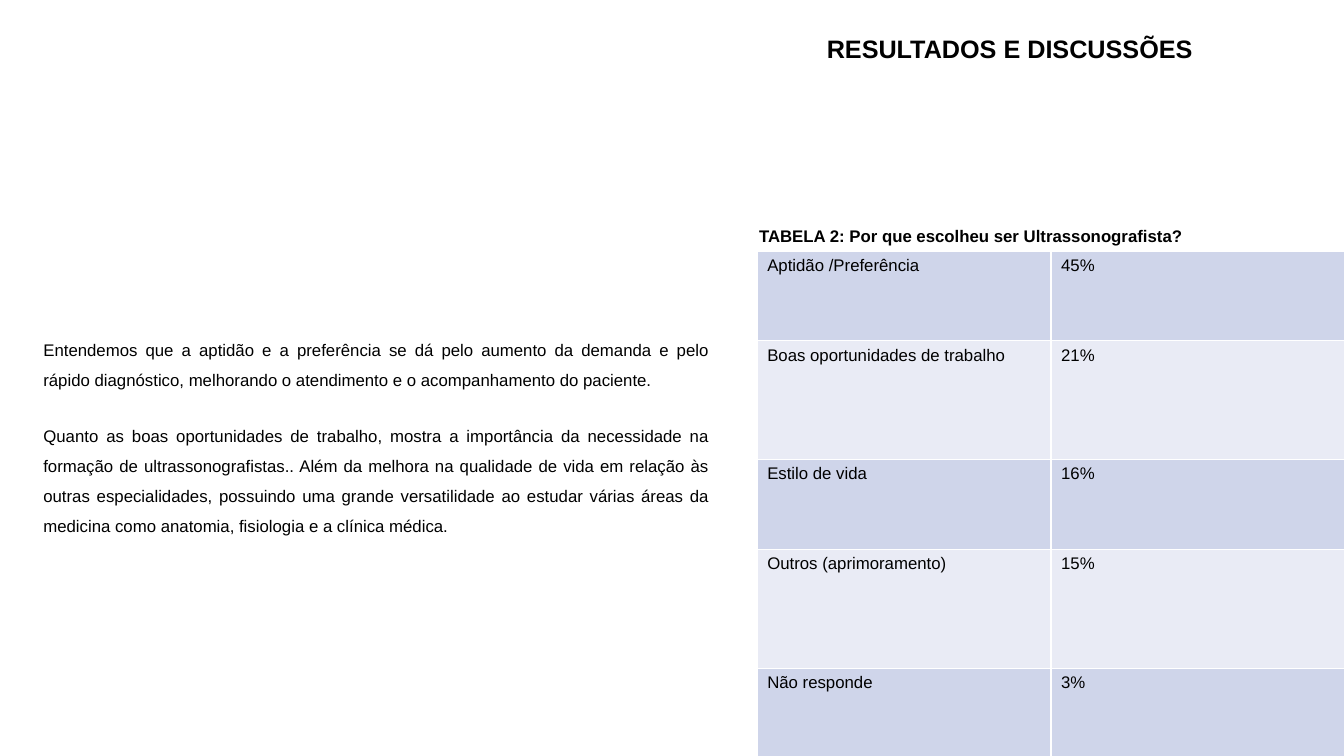
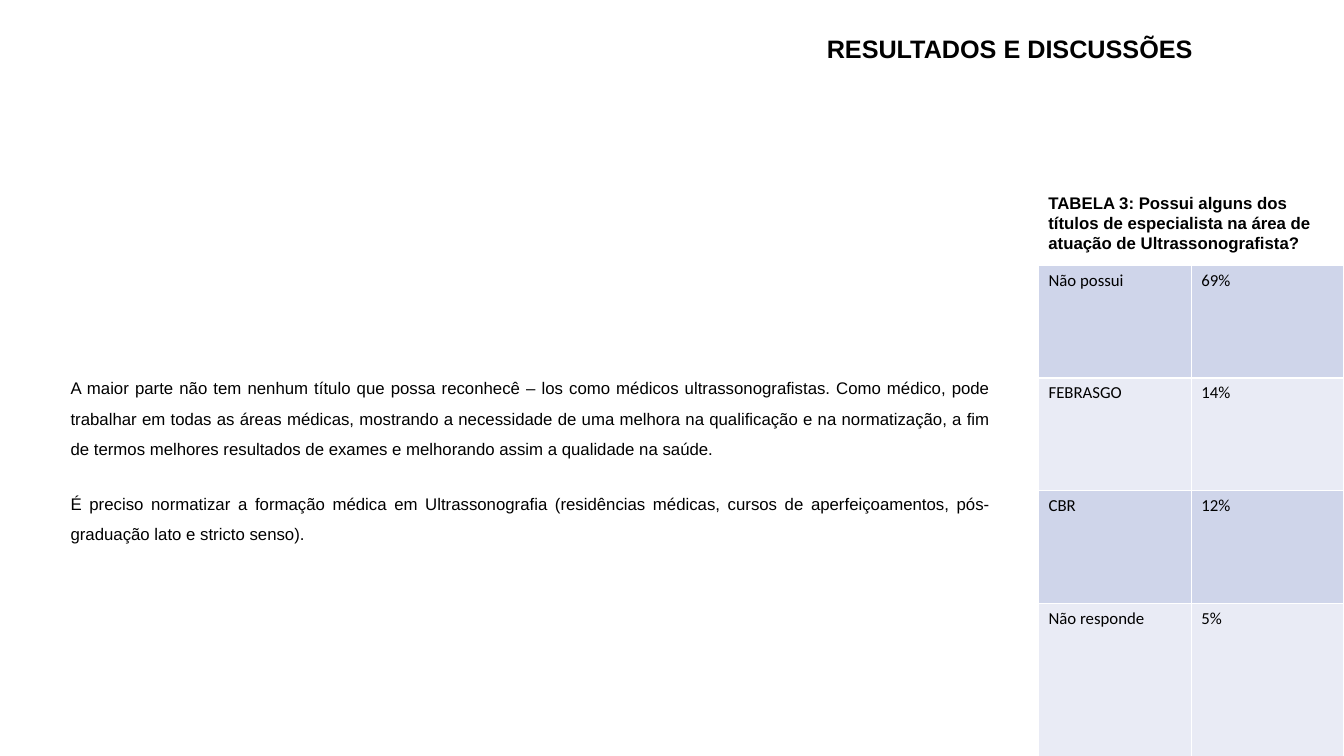
"""Build two survey result slides, each with a discussion text and a table."""
from lxml import etree
from pptx import Presentation
from pptx import util as u
from pptx.dml.color import RGBColor
from pptx.enum import text
from pptx.oxml.ns import qn

BLACK = RGBColor(0x00, 0x00, 0x00)
BANDS = (RGBColor(0xCF, 0xD5, 0xEA), RGBColor(0xE9, 0xEB, 0xF5))

TITLE = "RESULTADOS E DISCUSSÕES"
TITLE_BOX = (8.1, 0.13, 3.88, 0.55)
TITLE_FONT = {"name": "Arial", "size": u.Pt(18), "bold": True}
BODY_FONT = {"name": "Arial", "size": u.Pt(12), "bold": False}
CAPTION_FONT = {**BODY_FONT, "bold": True}

SLIDES = [
    {
        "body_box": (0.33, 3.22, 6.81, 3.02),
        "body": [
            "Entendemos que a aptidão e a preferência se dá pelo aumento da demanda e pelo "
            "rápido diagnóstico, melhorando o atendimento e o acompanhamento do paciente.",
            "Quanto as boas oportunidades de trabalho, mostra a importância da necessidade na "
            "formação de ultrassonografistas.. Além da melhora na qualidade de vida em relação "
            "às outras especialidades, possuindo uma grande versatilidade ao estudar várias "
            "áreas da medicina como anatomia, fisiologia e a clínica médica.",
        ],
        "caption": "TABELA 2: Por que escolheu ser Ultrassonografista?",
        "caption_box": (7.43, 2.18, 4.73, 0.31),
        "caption_spacing": 1.07,
        "table_at": (7.51, 2.49),
        "table_width": 5.83,
        "table_font": "Arial",
        "rows": [
            ("Aptidão /Preferência", "45%", 0.89),
            ("Boas oportunidades de trabalho", "21%", 1.18),
            ("Estilo de vida", "16%", 0.89),
            ("Outros (aprimoramento)", "15%", 1.18),
            ("Não responde", "3%", 0.89),
        ],
    },
    {
        "body_box": (0.6, 3.6, 9.33, 2.93),
        "body": [
            "A maior parte não tem nenhum título que possa reconhecê – los como médicos "
            "ultrassonografistas. Como médico, pode trabalhar em todas as áreas médicas, "
            "mostrando a necessidade de uma melhora na qualificação e na normatização, a fim "
            "de termos melhores resultados de exames e melhorando assim a qualidade na saúde.",
            "É preciso normatizar a formação médica em Ultrassonografia (residências médicas, "
            "cursos de aperfeiçoamentos, pós-graduação lato e stricto senso).",
        ],
        "caption": "TABELA 3: Possui alguns dos títulos de especialista na área de atuação "
                   "de Ultrassonografista?",
        "caption_box": (10.3, 1.86, 3.03, 1.01),
        "caption_spacing": 1.0,
        "table_at": (10.3, 2.63),
        "table_width": 3.03,
        "table_font": "Calibri",
        "rows": [
            ("Não possui", "69%", 1.12),
            ("FEBRASGO", "14%", 1.12),
            ("CBR", "12%", 1.12),
            ("Não responde", "5%", 1.52),
        ],
    },
]


def set_all(obj, values):
    for name, value in values.items():
        setattr(obj, name, value)


def place(sp, box):
    set_all(sp, dict(zip(("left", "top", "width", "height"), map(u.Inches, box))))


def write(p, words, font, **layout):
    set_all(p, layout)
    r = p.add_run()
    r.text = words
    set_all(r.font, font)
    r.font.color.rgb = BLACK


def add_title(s):
    tf = s.shapes.title.text_frame
    set_all(tf, {"auto_size": text.MSO_AUTO_SIZE.NONE, "word_wrap": True,
                 "vertical_anchor": text.MSO_ANCHOR.MIDDLE})
    write(tf.paragraphs[0], TITLE, TITLE_FONT,
          alignment=text.PP_ALIGN.LEFT, line_spacing=1.5)


def add_body(s, box, paragraphs):
    sp = s.placeholders[1]
    place(sp, box)
    tf = sp.text_frame
    set_all(tf, {"auto_size": text.MSO_AUTO_SIZE.NONE, "word_wrap": True})
    for i, words in enumerate(paragraphs):
        p = tf.add_paragraph() if i else tf.paragraphs[0]
        pPr = p._p.get_or_add_pPr()
        pPr.set("marL", "0")
        pPr.set("indent", "0")
        etree.SubElement(pPr, qn("a:buNone"))
        write(p, words, BODY_FONT, alignment=text.PP_ALIGN.JUSTIFY, line_spacing=1.5,
              space_before=u.Pt(10 if i else 0), space_after=u.Pt(8))


def add_caption(s, words, box, spacing):
    tf = s.shapes.add_textbox(*map(u.Inches, box)).text_frame
    tf.word_wrap = True
    write(tf.paragraphs[0], words, CAPTION_FONT, line_spacing=spacing)


def add_results(s, rows, at, width, font_name):
    box = (*at, width, sum(row[-1] for row in rows))
    table = s.shapes.add_table(len(rows), 2, *map(u.Inches, box)).table
    set_all(table, {"first_row": False, "horz_banding": False})
    for i, (answer, share, height) in enumerate(rows):
        table.rows[i].height = u.Inches(height)
        for cell, words in zip(table.rows[i].cells, (answer, share)):
            cell.fill.solid()
            cell.fill.fore_color.rgb = BANDS[i % 2]
            write(cell.text_frame.paragraphs[0], words, {**BODY_FONT, "name": font_name})


def main():
    prs = Presentation()
    set_all(prs, {"slide_width": u.Inches(13.33), "slide_height": u.Inches(7.5)})
    layout = prs.slide_layouts[1]
    place(layout.placeholders[0], TITLE_BOX)
    for content in SLIDES:
        s = prs.slides.add_slide(layout)
        add_title(s)
        add_body(s, content["body_box"], content["body"])
        add_caption(s, content["caption"], content["caption_box"], content["caption_spacing"])
        add_results(s, content["rows"], content["table_at"], content["table_width"],
                    content["table_font"])
    prs.save("out.pptx")


if __name__ == "__main__":
    main()
